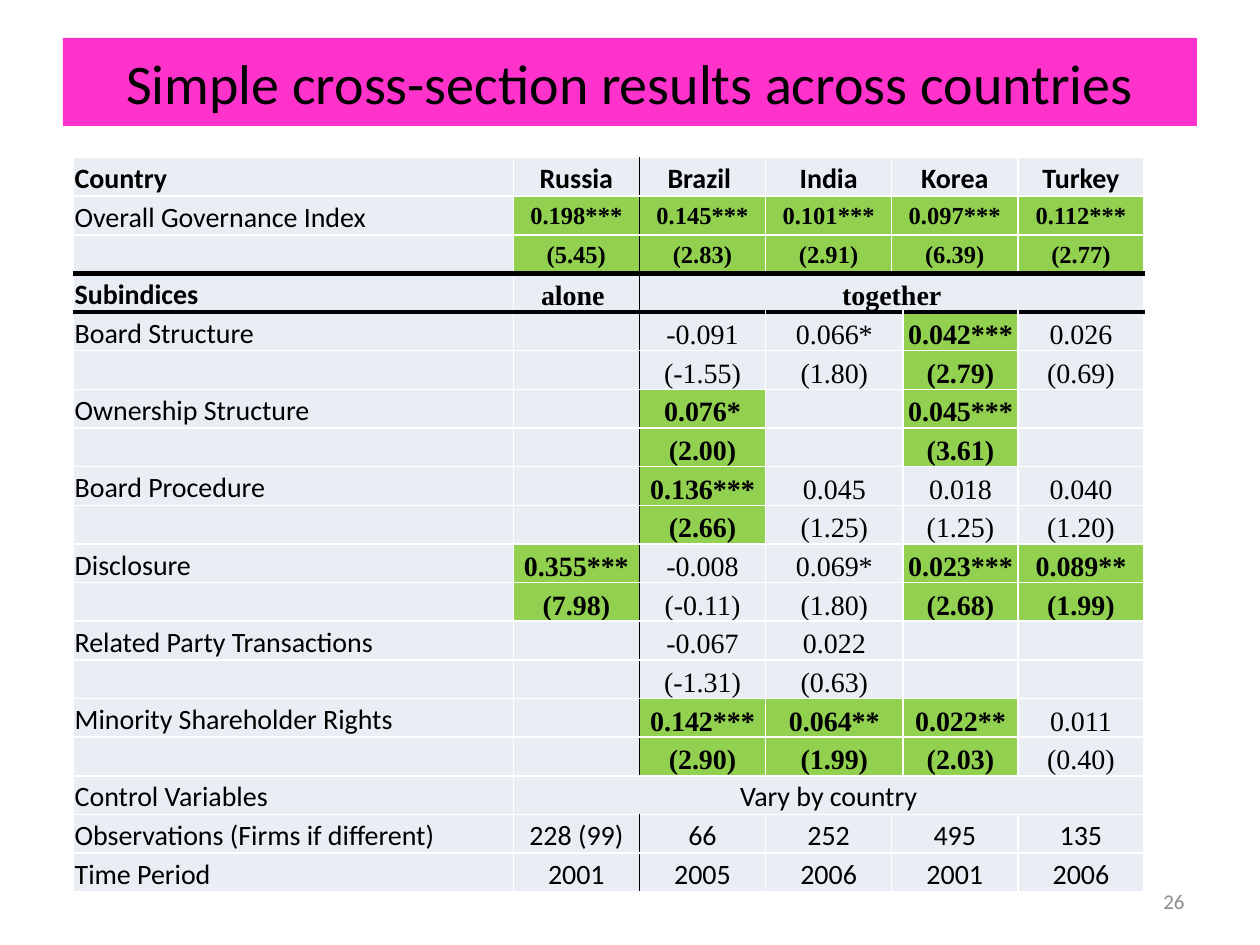
from dataclasses import dataclass
from typing import NamedTuple

import pptx
import pptx.dml.color
import pptx.enum.shapes
import pptx.enum.text
import pptx.oxml
import pptx.oxml.ns
import pptx.util

Pt = pptx.util.Pt
ALIGN = pptx.enum.text.PP_ALIGN
ANCHOR = pptx.enum.text.MSO_ANCHOR

SANS, SERIF = "Calibri", "Times New Roman"
PALE, GREEN, BLACK, WHITE = "E9EDF4", "92D050", "000000", "FFFFFF"
CRITICAL_T = 1.96

COL_WIDTHS = [251.3, 72.1, 72.1, 72.1, 6.5, 65.6, 72.1]
ROW_HEIGHT = 22.1
# Grid columns taken by each cell of a row
WIDE_KOREA = (1, 1, 1, 1, 2, 1)
WIDE_INDIA = (1, 1, 1, 2, 1, 1)
ALONE_TOGETHER = (1, 1, 5)
ALL_COUNTRIES = (1, 6)


class Style(NamedTuple):
    font: str = SANS
    size: float = 16
    bold: bool = False
    color: str = BLACK
    align: ALIGN = ALIGN.CENTER


@dataclass
class Cell:
    text: str
    style: Style = Style()
    fill: str = PALE
    anchor: ANCHOR = ANCHOR.BOTTOM


@dataclass
class Row:
    cells: list[Cell]
    spans: tuple[int, ...] = WIDE_KOREA
    rule_below: bool = False


class Estimate(NamedTuple):
    coef: str
    t: str

    @property
    def significant(self) -> bool:
        return abs(float(self.t)) >= CRITICAL_T


INDEX = [Estimate("0.198***", "5.45"), Estimate("0.145***", "2.83"), Estimate("0.101***", "2.91"),
         Estimate("0.097***", "6.39"), Estimate("0.112***", "2.77")]

SUBINDICES = {
    "Board Structure": [None, Estimate("-0.091", "-1.55"), Estimate("0.066*", "1.80"),
                        Estimate("0.042***", "2.79"), Estimate("0.026", "0.69")],
    "Ownership Structure": [None, Estimate("0.076*", "2.00"), None,
                            Estimate("0.045***", "3.61"), None],
    "Board Procedure": [None, Estimate("0.136***", "2.66"), Estimate("0.045", "1.25"),
                        Estimate("0.018", "1.25"), Estimate("0.040", "1.20")],
    "Disclosure": [Estimate("0.355***", "7.98"), Estimate("-0.008", "-0.11"),
                   Estimate("0.069*", "1.80"), Estimate("0.023***", "2.68"),
                   Estimate("0.089**", "1.99")],
    "Related Party Transactions": [None, Estimate("-0.067", "-1.31"), Estimate("0.022", "0.63"),
                                   None, None],
    "Minority Shareholder Rights": [None, Estimate("0.142***", "2.90"), Estimate("0.064**", "1.99"),
                                    Estimate("0.022**", "2.03"), Estimate("0.011", "0.40")],
}


def rgb(value: str) -> pptx.dml.color.RGBColor:
    return pptx.dml.color.RGBColor.from_string(value)


def write(tf, text: str, style: Style) -> None:
    p = tf.paragraphs[0]
    p.text = text
    p.alignment = style.align
    p.font.name, p.font.size, p.font.bold = style.font, Pt(style.size), style.bold
    p.font.color.rgb = rgb(style.color)


def label(text: str, bold: bool = False) -> Cell:
    return Cell(text, Style(bold=bold, align=ALIGN.LEFT))


def plain_row(name: str, *values: str, bold: bool = False, spans=WIDE_KOREA) -> Row:
    return Row([label(name, bold)] + [Cell(v, Style(bold=bold)) for v in values], spans)


def estimate_rows(name: str, estimates: list, spans, size: float = 16,
                  anchor: ANCHOR = ANCHOR.BOTTOM, rule_below: bool = False) -> list[Row]:
    """Return a row of coefficients and a row of t-statistics below it."""
    coefs, ts = [label(name)], [label("")]
    for e in estimates:
        strong = e is not None and e.significant
        style, fill = Style(SERIF, size, strong), GREEN if strong else PALE
        coefs.append(Cell(e.coef if e else "", style, fill, anchor))
        ts.append(Cell(f"({e.t})" if e else "", style, fill, anchor))
    return [Row(coefs, spans), Row(ts, spans, rule_below)]


def table_rows() -> list[Row]:
    heading = Style(SERIF, bold=True)
    rows = [plain_row("Country", "Russia", "Brazil ", "India", "Korea", "Turkey", bold=True)]
    rows += estimate_rows("Overall Governance Index", INDEX, WIDE_KOREA, 14, ANCHOR.MIDDLE, True)
    rows.append(Row([label("Subindices", True), Cell("alone ", heading), Cell("together", heading)],
                    ALONE_TOGETHER, True))
    for name, estimates in SUBINDICES.items():
        rows += estimate_rows(name, estimates, WIDE_INDIA)
    rows += [
        plain_row("Control Variables", "Vary by country", spans=ALL_COUNTRIES),
        plain_row("Observations (Firms if different)", "228 (99)", "66", "252", "495", "135"),
        plain_row("Time Period", "2001", "2005", "2006", "2001", "2006"),
    ]
    return rows


def set_border(cell, side: str, color: str, width: float) -> None:
    ln = pptx.oxml.parse_xml(
        f'<a:ln{side} {pptx.oxml.ns.nsdecls("a")} w="{Pt(width)}"><a:solidFill>'
        f'<a:srgbClr val="{color}"/></a:solidFill></a:ln{side}>')
    cell._tc.get_or_add_tcPr().append(ln)


def draw_borders(cell, col: int, row: Row, above: Row | None) -> None:
    """Rule off marked rows, and Russia from the countries run together."""
    split = row.spans != ALL_COUNTRIES
    rule, thin = (BLACK, 3), (WHITE, 1)
    set_border(cell, "L", BLACK if split and col == 2 else WHITE, 1)
    set_border(cell, "R", BLACK if split and col == 1 else WHITE, 1)
    set_border(cell, "T", *(rule if above and above.rule_below else thin))
    set_border(cell, "B", *(rule if row.rule_below else thin))


def draw_table(s, rows: list[Row], left: float, top: float) -> None:
    tbl = s.shapes.add_table(len(rows), len(COL_WIDTHS), Pt(left), Pt(top),
                             Pt(sum(COL_WIDTHS)), Pt(ROW_HEIGHT * len(rows))).table
    tbl.first_row = tbl.horz_banding = False
    for column, width in zip(tbl.columns, COL_WIDTHS):
        column.width = Pt(width)
    for i, row in enumerate(rows):
        tbl.rows[i].height = Pt(ROW_HEIGHT)
        col = 0
        for item, span in zip(row.cells, row.spans):
            for c in range(col, col + span):
                cell = tbl.cell(i, c)
                draw_borders(cell, c, row, rows[i - 1] if i else None)
                cell.fill.solid()
                cell.fill.fore_color.rgb = rgb(item.fill)
            cell = tbl.cell(i, col)
            if span > 1:
                cell.merge(tbl.cell(i, col + span - 1))
            cell.margin_left = cell.margin_right = cell.margin_top = Pt(0.7)
            cell.margin_bottom = 0
            cell.vertical_anchor = item.anchor
            write(cell.text_frame, item.text, item.style)
            col += span


def draw_title(s, text: str) -> None:
    sp = s.shapes.add_shape(pptx.enum.shapes.MSO_SHAPE.RECTANGLE, Pt(36), Pt(21.6), Pt(648), Pt(50.4))
    sp.shadow.inherit = False
    sp.fill.solid()
    sp.fill.fore_color.rgb = rgb("FF33CC")
    sp.line.fill.background()
    sp.text_frame.word_wrap = True
    sp.text_frame.vertical_anchor = ANCHOR.MIDDLE
    write(sp.text_frame, text, Style(size=32))


def draw_page_number(s, number: str) -> None:
    tf = s.shapes.add_textbox(Pt(516), Pt(500.5), Pt(168), Pt(28.8)).text_frame
    tf.word_wrap = True
    tf.vertical_anchor = ANCHOR.MIDDLE
    write(tf, number, Style(size=12, color="8C8C8C", align=ALIGN.RIGHT))


def main() -> None:
    prs = pptx.Presentation()
    prs.slide_width, prs.slide_height = Pt(720), Pt(540)
    s = prs.slides.add_slide(prs.slide_layouts[6])
    draw_title(s, "Simple cross-section results across countries")
    draw_table(s, table_rows(), 42, 90)
    draw_page_number(s, "26")
    prs.save("out.pptx")


if __name__ == "__main__":
    main()
